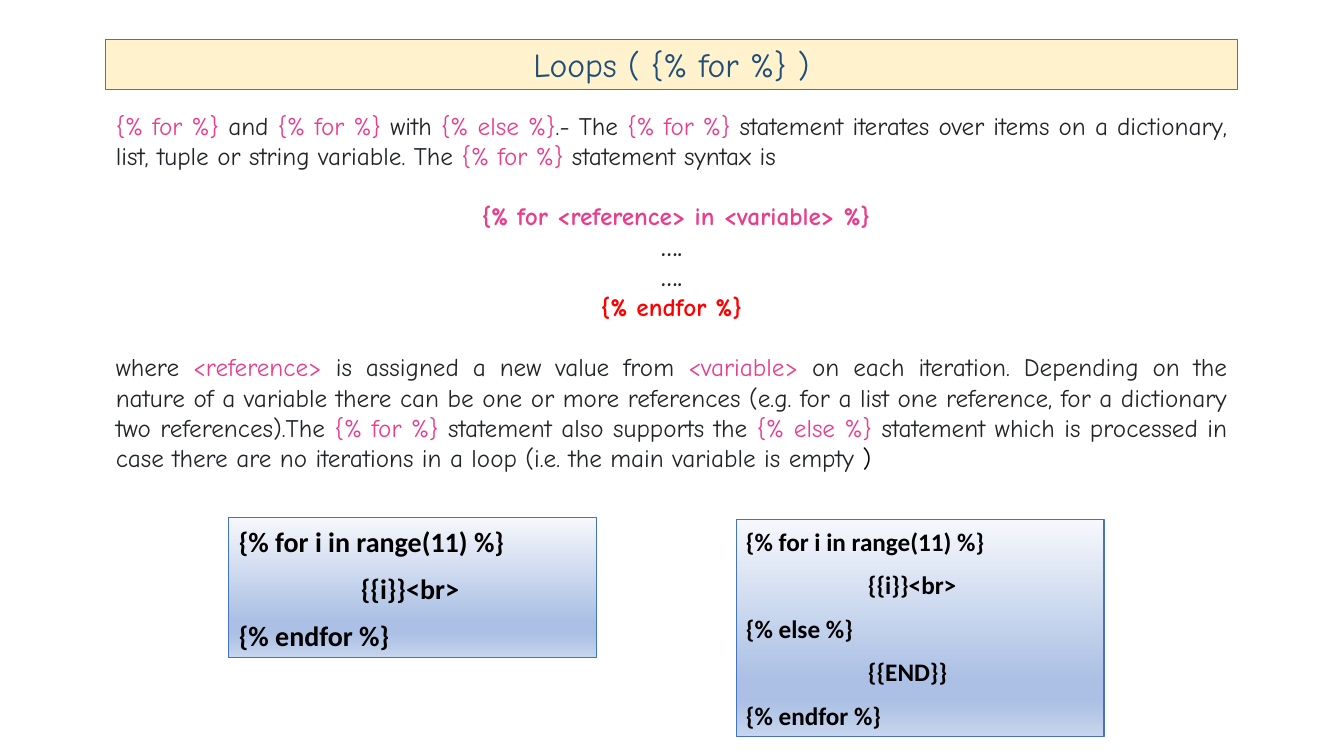
"""Build the slide that explains the for loop of a template language."""
from dataclasses import dataclass

from lxml.etree import SubElement
from pptx import Presentation
from pptx.dml.color import RGBColor
from pptx.enum.shapes import MSO_SHAPE
from pptx.enum.text import MSO_ANCHOR as Anchor, MSO_AUTO_SIZE as AutoSize, PP_ALIGN as Align
from pptx.oxml.ns import qn
from pptx.util import Inches, Pt

NAVY = RGBColor(0x1F, 0x4E, 0x79)
CREAM = RGBColor(0xFF, 0xF2, 0xCC)
BLUE = RGBColor(0x44, 0x72, 0xC4)
PINK = RGBColor(0xE8, 0x3E, 0x8C)
INK = RGBColor(0x21, 0x25, 0x29)
RED = RGBColor(0xFF, 0x00, 0x00)
BLACK = RGBColor(0x00, 0x00, 0x00)
WHITE = RGBColor(0xFF, 0xFF, 0xFF)
FADE = (
    (0, RGBColor(0xF6, 0xF8, 0xFC)),
    (74, RGBColor(0xAB, 0xC0, 0xE4)),
    (83, RGBColor(0xAB, 0xC0, 0xE4)),
    (100, RGBColor(0xC7, 0xD5, 0xED)),
)
PROSE_FONT = "Comic Neue"
CODE_FONT = "Calibri"
CODE_INDENT = Inches(1.21)
BLOCK_GAP = Pt(21.6)


@dataclass(frozen=True)
class Piece:
    text: str
    color: RGBColor = INK


@dataclass(frozen=True)
class Passage:
    pieces: tuple[Piece, ...]
    layout: dict
    bold: bool = False


@dataclass(frozen=True)
class Panel:
    left: float
    top: float
    width: float
    height: float
    font: str
    size: int
    passages: tuple[Passage, ...]
    fill: RGBColor | None = None
    outlined: bool = True
    anchor: Anchor = Anchor.TOP


def prose(marked: str) -> tuple[Piece, ...]:
    return tuple(
        Piece(part, PINK if index % 2 else INK)
        for index, part in enumerate(marked.split("|"))
        if part
    )


def code_lines(*lines: str) -> tuple[Passage, ...]:
    layout = {"line_spacing": 1.07, "space_after": Pt(8)}
    return tuple(Passage((Piece(line, BLACK),), layout, True) for line in lines)


def apply_format(target, values: dict) -> None:
    for name, value in values.items():
        setattr(target, name, value)


def fade_down(shape) -> None:
    shape.fill.gradient()
    shape.fill.gradient_angle = 270
    stops = shape._element.spPr.find(qn("a:gradFill")).find(qn("a:gsLst"))
    for stop in list(stops):
        stops.remove(stop)
    for percent, color in FADE:
        stop = SubElement(stops, qn("a:gs"), pos=str(percent * 1000))
        SubElement(stop, qn("a:srgbClr"), val=str(color))


def draw_panel(slide, panel: Panel) -> None:
    place = (panel.left, panel.top, panel.width, panel.height)
    shape = slide.shapes.add_shape(MSO_SHAPE.RECTANGLE, *map(Inches, place))
    shape.shadow.inherit = False
    if panel.fill is None:
        fade_down(shape)
    else:
        shape.fill.solid()
        shape.fill.fore_color.rgb = panel.fill
    if panel.outlined:
        shape.line.color.rgb = BLUE
        shape.line.width = Pt(0.75)
    else:
        shape.line.fill.background()

    frame = shape.text_frame
    apply_format(frame, {
        "word_wrap": True,
        "auto_size": AutoSize.SHAPE_TO_FIT_TEXT,
        "vertical_anchor": panel.anchor,
    })
    for index, passage in enumerate(panel.passages):
        paragraph = frame.add_paragraph() if index else frame.paragraphs[0]
        apply_format(paragraph, {"alignment": Align.LEFT, **passage.layout})
        if passage.pieces[0].text.startswith("{{"):
            paragraph._p.get_or_add_pPr().set("marL", str(CODE_INDENT))
        for piece in passage.pieces:
            run = paragraph.add_run()
            run.text = piece.text
            apply_format(run.font, {
                "name": panel.font, "size": Pt(panel.size), "bold": passage.bold,
            })
            run.font.color.rgb = piece.color


CENTERED = {"alignment": Align.CENTER}
JUSTIFIED = {"alignment": Align.JUSTIFY}
GAP_ABOVE = {"space_before": BLOCK_GAP}

TITLE = Panel(
    1.05, 0.39, 11.22, 0.5, PROSE_FONT, 24,
    (Passage((Piece("Loops ( {% for %} )", NAVY),), CENTERED),), CREAM,
)
EXPLANATION = Panel(
    1.05, 1.02, 11.22, 3.74, PROSE_FONT, 18,
    (
        Passage(prose(
            "|{% for %}| and |{% for %}| with |{% else %}|.- The |{% for %}"
            "| statement iterates over items on a dictionary, list, tuple or string "
            "variable. The |{% for %}| statement syntax is"
        ), JUSTIFIED),
        Passage(prose(" |{% for <reference> in <variable> %}"), CENTERED | GAP_ABOVE, True),
        Passage(prose("…."), CENTERED, True),
        Passage(prose("…."), CENTERED, True),
        Passage((Piece("{% endfor %}", RED),), CENTERED, True),
        Passage(prose(
            "where |<reference>| is assigned a new value from |<variable>"
            "| on each iteration. Depending on the nature of a variable there can be one "
            "or more references (e.g. for a list one reference, for a dictionary two "
            "references).The |{% for %}| statement also supports the |{% else %}"
            "| statement which is processed in case there are no iterations in a loop "
            "(i.e. the main variable is empty"
        ) + (Piece(" )", BLACK),), JUSTIFIED | GAP_ABOVE),
    ),
    WHITE, False, Anchor.MIDDLE,
)
FOR_EXAMPLE = Panel(
    2.27, 5.13, 3.65, 1.39, CODE_FONT, 20,
    code_lines("{% for i in range(11) %}", "{{i}}<br>", "{% endfor %}"),
)
ELSE_EXAMPLE = Panel(
    7.3, 5.15, 3.65, 2.16, CODE_FONT, 18,
    code_lines("{% for i in range(11) %}", "{{i}}<br>", "{% else %}", "{{END}}", "{% endfor %}"),
)


def main() -> None:
    deck = Presentation()
    apply_format(deck, {"slide_width": Inches(13.33), "slide_height": Inches(7.5)})
    slide = deck.slides.add_slide(deck.slide_layouts[6])
    for panel in (TITLE, EXPLANATION, FOR_EXAMPLE, ELSE_EXAMPLE):
        draw_panel(slide, panel)
    deck.save("out.pptx")


if __name__ == "__main__":
    main()
